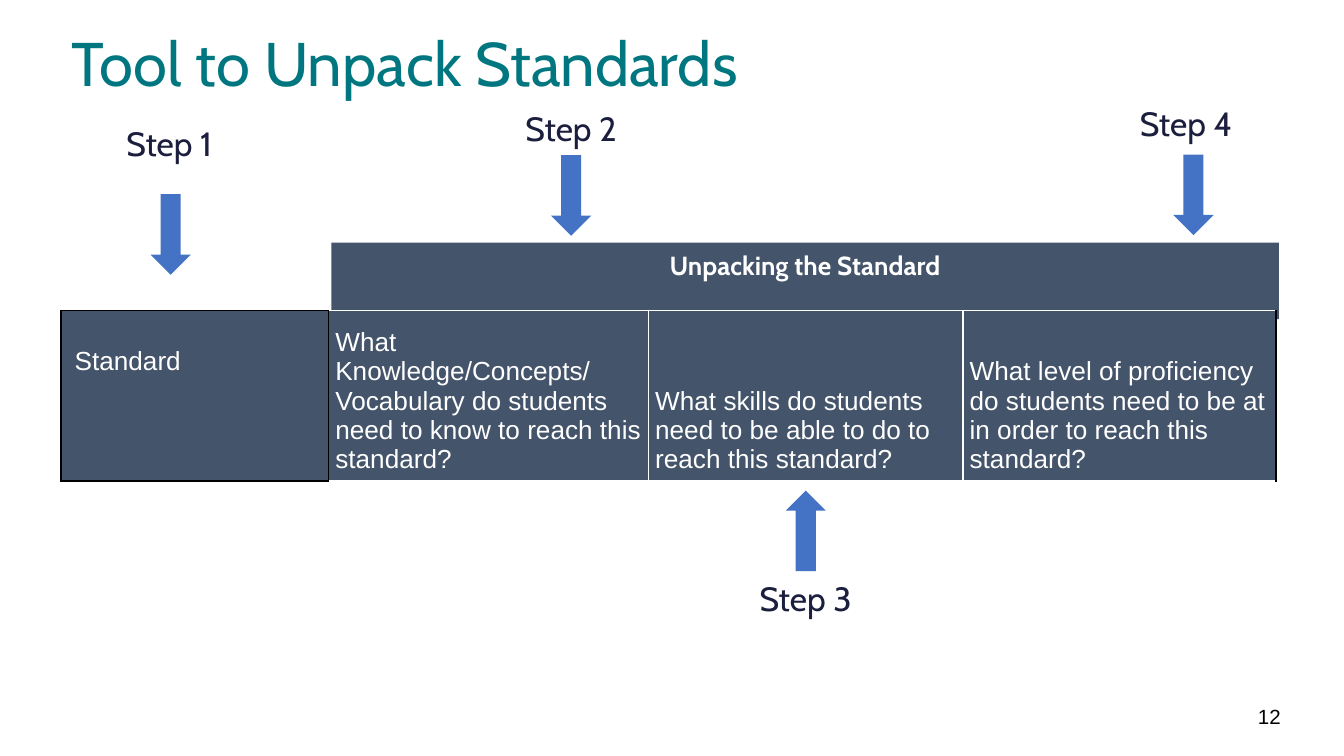
from lxml import etree
from pptx import Presentation
from pptx.dml.color import RGBColor
from pptx.enum import shapes, text
from pptx.oxml.ns import qn
from pptx.util import Pt

PX = 4572  # EMU per px, 200 px to the inch

THEME = {
    "teal": "007780", "navy": "1B1E3D", "blue": "4472C4", "slate": "44546A",
    "white": "FFFFFF", "black": "000000",
    "heading": "Cabin", "body": "Arial",
    "title_size": 33, "step_size": 18, "table_size": 14, "number_size": 11,
}
LEFT, CENTER, RIGHT = text.PP_ALIGN.LEFT, text.PP_ALIGN.CENTER, text.PP_ALIGN.RIGHT
TOP, MIDDLE, BOTTOM = text.MSO_ANCHOR.TOP, text.MSO_ANCHOR.MIDDLE, text.MSO_ANCHOR.BOTTOM


def write(frame, words, size, color, font="heading", align=LEFT, anchor=TOP,
          margins=(20, 10, 20, 10), bold=False, cell=None):
    """Fill a text frame with one paragraph; a table cell holds its own margins."""
    frame.word_wrap = True
    sides = ("left", "top", "right", "bottom")
    layout = {f"margin_{side}": gap * PX for side, gap in zip(sides, margins)}
    layout["vertical_anchor"] = anchor
    for name, value in layout.items():
        setattr(cell or frame, name, value)
    paragraph = frame.paragraphs[0]
    paragraph.alignment = align
    run = paragraph.add_run()
    run.text = words
    for name, value in {"size": Pt(THEME[size]), "name": THEME[font], "bold": bold}.items():
        setattr(run.font, name, value)
    run.font.color.rgb = RGBColor.from_string(THEME[color])
    return paragraph


def add_block(kind, box, color):
    """Add a preset shape with a plain fill, no line and no shadow."""
    shape = slide.shapes.add_shape(kind, *[length * PX for length in box])
    shape.shadow.inherit = False
    shape.fill.solid()
    shape.fill.fore_color.rgb = RGBColor.from_string(THEME[color])
    shape.line.fill.background()
    return shape


presentation = Presentation()
presentation.slide_width, presentation.slide_height = 2000 * PX, 1125 * PX
slide = presentation.slides.add_slide(presentation.slide_layouts[6])

# Title and slide number
title = slide.shapes.add_textbox(92 * PX, 42 * PX, 1410 * PX, 216 * PX)
write(title.text_frame, "Tool to Unpack Standards", "title_size", "teal",
      margins=(15, 8, 15, 8)).line_spacing = 0.9
number = slide.shapes.add_textbox(1809 * PX, 1036 * PX, 112 * PX, 60 * PX)
write(number.text_frame, "12", "number_size", "black", "body", RIGHT, MIDDLE, (15, 8, 15, 8))

# Step labels with their arrows: label left and top, arrow left and top, rotation
STEPS = [
    (152, 173, 224, 289, 0),
    (750, 151, 820, 231, 0),
    (1099, 850, 1169, 730, 180),
    (1665, 143, 1746, 230, 0),
]
for step, (label_x, label_y, arrow_x, arrow_y, rotation) in enumerate(STEPS, 1):
    label = slide.shapes.add_textbox(label_x * PX, label_y * PX, 200 * PX, 80 * PX)
    write(label.text_frame, f"Step {step}", "step_size", "navy", align=CENTER)
    arrow = add_block(shapes.MSO_SHAPE.DOWN_ARROW, (arrow_x, arrow_y, 60, 120), "blue")
    arrow.rotation = rotation

# Band above the table
band = add_block(shapes.MSO_SHAPE.RECTANGLE, (493, 361, 1410, 114), "slate")
write(band.text_frame, "Unpacking the Standard", "table_size", "white", align=CENTER, bold=True)

# Table: width, words, anchor, margins, border colours (left, right, top, bottom)
QUESTION = (BOTTOM, (10, 10, 10, 10))
COLUMNS = [
    (398, "Standard", TOP, (20, 54, 20, 10), ["black"] * 4),
    (476, "What Knowledge/Concepts/ Vocabulary do students need to know to reach this standard?",
     *QUESTION, ["black", "white", "white", "white"]),
    (468, "What skills do students need to be able to do to reach this standard?",
     *QUESTION, ["white"] * 4),
    (466, "What level of proficiency do students need to be at in order to reach this standard?",
     *QUESTION, ["white", "black", "white", "white"]),
]
table_width = sum(column[0] for column in COLUMNS)
table = slide.shapes.add_table(1, len(COLUMNS), 91 * PX, 462 * PX,
                               table_width * PX, 254 * PX).table
table.first_row = table.horz_banding = False
for index, (width, words, anchor, margins, borders) in enumerate(COLUMNS):
    table.columns[index].width = width * PX
    cell = table.cell(0, index)
    write(cell.text_frame, words, "table_size", "white", "body",
          anchor=anchor, margins=margins, cell=cell)
    properties = cell._tc.get_or_add_tcPr()
    for edge, color in zip("LRTB", borders):
        line = etree.SubElement(properties, qn(f"a:ln{edge}"), w=str(Pt(1)))
        fill = etree.SubElement(line, qn("a:solidFill"))
        etree.SubElement(fill, qn("a:srgbClr"), val=THEME[color])
    cell.fill.solid()
    cell.fill.fore_color.rgb = RGBColor.from_string(THEME["slate"])

presentation.save("out.pptx")
